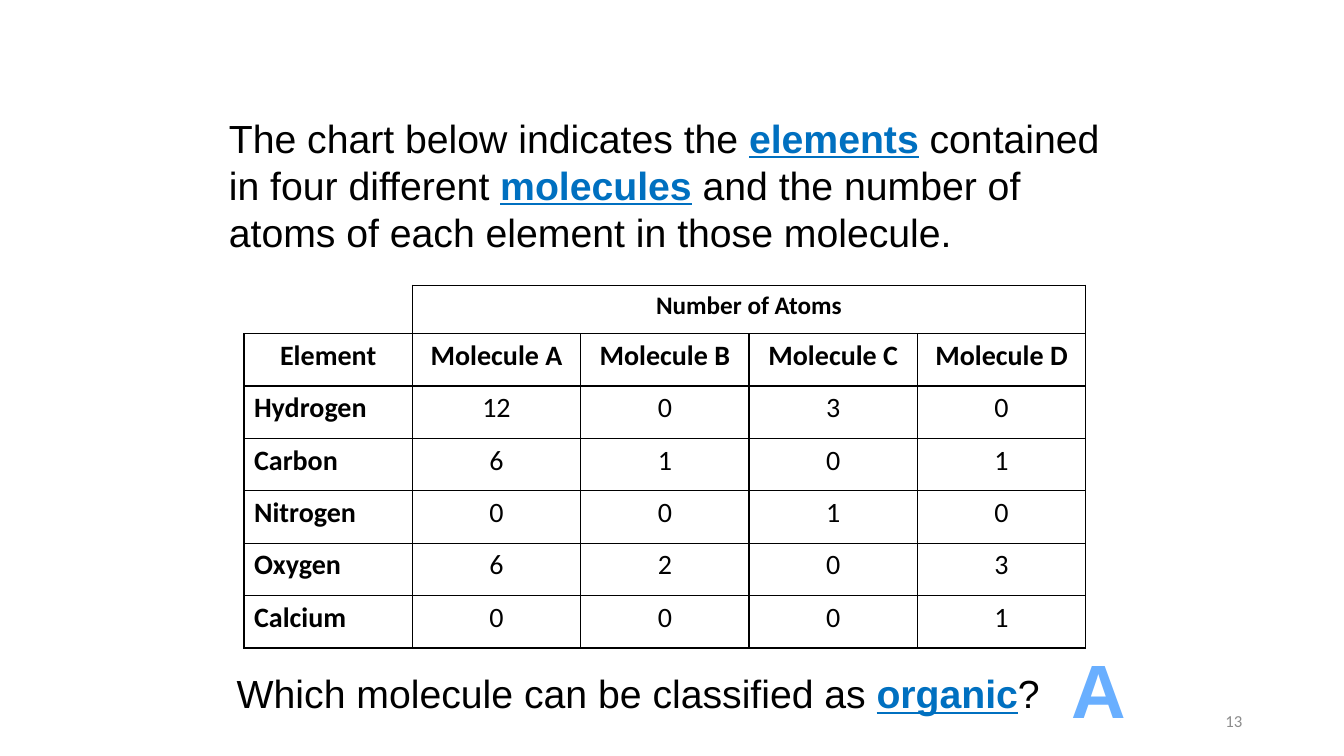
"""Builds a quiz slide with a table of the atoms in four molecules."""
import pptx
import pptx.util
import pptx.dml.color
import pptx.enum.text
import pptx.oxml

Inches = pptx.util.Inches
Align = pptx.enum.text.PP_ALIGN
Anchor = pptx.enum.text.MSO_ANCHOR
Fit = pptx.enum.text.MSO_AUTO_SIZE
NS = 'xmlns:a="http://schemas.openxmlformats.org/drawingml/2006/main"'


def paint(font, shade):
    font.fill.solid()
    font.fill.fore_color.rgb = pptx.dml.color.RGBColor.from_string(shade)


def write(frame, text, size, name="Arial", shade="000000", bold=False, align=Align.LEFT):
    para = frame.paragraphs[0]
    para.alignment = align
    for index, part in enumerate(text.split("*")):
        key = index % 2 == 1
        run = para.add_run()
        run.text = part
        look = {"size": pptx.util.Pt(size), "name": name, "bold": bold or key, "underline": key}
        for attr, value in look.items():
            setattr(run.font, attr, value)
        paint(run.font, "0070C0" if key else shade)
    return run


deck = pptx.Presentation()
deck.slide_width, deck.slide_height = Inches(13.33), Inches(7.5)
slide = deck.slides.add_slide(deck.slide_layouts[5])

title = slide.shapes.title
place = {"left": 2.17, "top": 1.08, "width": 9.17, "height": 1.51}
for attr, value in place.items():
    setattr(title, attr, Inches(value))
setup = {"word_wrap": True, "auto_size": Fit.NONE, "vertical_anchor": Anchor.TOP}
for attr, value in setup.items():
    setattr(title.text_frame, attr, value)
write(title.text_frame,
      "The chart below indicates the *elements* contained in four different *molecules*"
      " and the number of atoms of each element in those molecule.", 28)

rows = [
    ["", "Number of Atoms", "", "", ""],
    ["Element", "Molecule A", "Molecule B", "Molecule C", "Molecule D"],
    ["Hydrogen", "12", "0", "3", "0"],
    ["Carbon", "6", "1", "0", "1"],
    ["Nitrogen", "0", "0", "1", "0"],
    ["Oxygen", "6", "2", "0", "3"],
    ["Calcium", "0", "0", "0", "1"],
]
table = slide.shapes.add_table(
    len(rows), 5, Inches(2.42), Inches(2.83), Inches(8.33), Inches(3.6)).table
table.first_row = table.horz_banding = False
for col in table.columns:
    col.width = Inches(1.67)
for r, row in enumerate(rows):
    table.rows[r].height = Inches(0.52 if r else 0.48)
    for c, text in enumerate(row):
        cell = table.cell(r, c)
        props = cell._tc.get_or_add_tcPr()
        for side in "LRTB" if r or c else "RB":
            props.append(pptx.oxml.parse_xml(
                f'<a:ln{side} {NS} w="12700"><a:solidFill><a:srgbClr val="000000"/>'
                f'</a:solidFill></a:ln{side}>'))
        cell.fill.background()
        if text:
            write(cell.text_frame, text, 20 if r else 18, "Calibri", bold=r < 2 or c == 0,
                  align=Align.LEFT if r > 1 and c == 0 else Align.CENTER)
table.cell(0, 1).merge(table.cell(0, 4))

ask = slide.shapes.add_textbox(Inches(2.25), Inches(6.59), Inches(9.17), Inches(0.57))
ask.text_frame.word_wrap = True
write(ask.text_frame, "Which molecule can be classified as *organic*?", 28)

answer = slide.shapes.add_textbox(Inches(10.5), Inches(6.33), Inches(0.79), Inches(1.01))
answer.text_frame.word_wrap = False
letter = write(answer.text_frame, "A", 54, shade="69AFFF", bold=True, align=Align.CENTER)
props = letter.font._element
props.set("spc", "300")
props.find(pptx.oxml.ns.qn("a:latin")).addprevious(pptx.oxml.parse_xml(
    f'<a:effectLst {NS}><a:outerShdw blurRad="25400" dist="38100" dir="2700000">'
    '<a:srgbClr val="BDDCFF"/></a:outerShdw></a:effectLst>'))

number = slide.shapes.add_textbox(Inches(9.42), Inches(6.95), Inches(3), Inches(0.4))
number.text_frame.vertical_anchor = Anchor.MIDDLE
write(number.text_frame, "13", 12, "Calibri", "8C8C8C", align=Align.RIGHT)
number.text_frame.word_wrap = True

deck.save("out.pptx")
